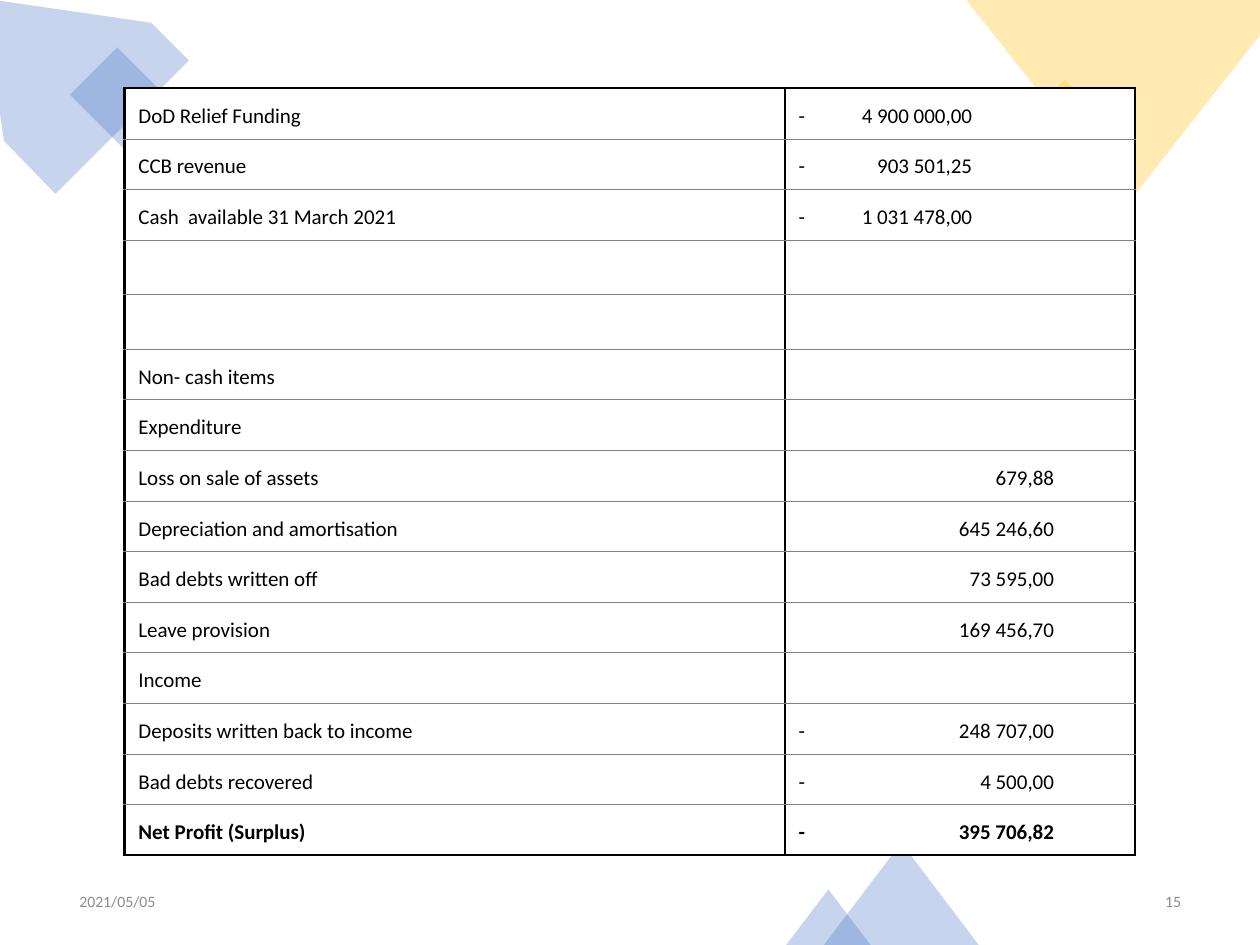
from lxml.etree import SubElement
from pptx import Presentation
from pptx.dml.color import RGBColor
from pptx.enum.shapes import MSO_SHAPE as SHAPE
from pptx.enum.text import MSO_ANCHOR as ANCHOR, PP_ALIGN as ALIGN
from pptx.oxml.ns import qn
from pptx.util import Cm, Pt

BLUE, YELLOW, BLACK, GREY, WHITE = "4472C4", "FFC000", "000000", "808080", "FFFFFF"
FONT = "Calibri"

ROWS = [
    ("DoD Relief Funding", "-", "4 900 000,00"),
    ("CCB revenue", "-", "903 501,25"),
    ("Cash  available 31 March 2021", "-", "1 031 478,00"),
    ("", "", ""),
    ("", "", ""),
    ("Non- cash items", "", ""),
    ("Expenditure", "", ""),
    ("Loss on sale of assets", "", "679,88"),
    ("Depreciation and amortisation", "", "645 246,60"),
    ("Bad debts written off", "", "73 595,00"),
    ("Leave provision", "", "169 456,70"),
    ("Income", "", ""),
    ("Deposits written back to income", "-", "248 707,00"),
    ("Bad debts recovered", "-", "4 500,00"),
    ("Net Profit (Surplus)", "-", "395 706,82"),
]
CASH_ROWS = 3
CASH_TAB, ITEM_TAB = 3.5, 5.15
COLUMNS = (13.31, 7.06)
ROW_HEIGHT, GAP_HEIGHT = 1.02, 1.1
TABLE_LEFT, TABLE_TOP = 2.51, 1.78

POLYGONS = [
    (BLUE, [(3.05, 0.46), (-0.33, -0.03), (0.08, 2.84), (1.12, 3.91), (3.81, 1.22)]),
    (YELLOW, [(25.4, 0), (19.48, 0), (22.73, 4.11), (25.4, 0.71)]),
]
DIAMONDS = [(BLUE, (1.85, 1.17, 1.35, 1.8)), (YELLOW, (20.93, 1.83, 1.42, 1.9))]
TRIANGLES = [(BLUE, (16.61, 16.99, 3.12, 2.06)), (BLUE, (15.85, 17.93, 1.7, 1.12))]
FOOTERS = [("2021/05/05", 1.35, ALIGN.LEFT), ("15", 18.34, ALIGN.RIGHT)]


def rgb(code):
    return RGBColor.from_string(code)


def tint(sp, color):
    sp.shadow.inherit = False
    sp.fill.solid()
    sp.fill.fore_color.rgb = rgb(color)
    sp.line.fill.background()
    clr = sp._element.spPr.find(qn("a:solidFill")).find(qn("a:srgbClr"))
    SubElement(clr, qn("a:alpha"), val="30000")


def add_polygon(s, color, points):
    pts = [(Cm(x), Cm(y)) for x, y in points]
    builder = s.shapes.build_freeform(*pts[0])
    builder.add_line_segments(pts[1:], close=True)
    tint(builder.convert_to_shape(), color)


def add_preset(s, kind, color, box, rotation=0):
    sp = s.shapes.add_shape(kind, *map(Cm, box))
    sp.rotation = rotation
    tint(sp, color)


def style(p, size, color, bold=False):
    f = p.font
    f.name, f.size, f.bold = FONT, Pt(size), bold
    f.color.rgb = rgb(color)


def add_footer(s, text, left, align):
    tf = s.shapes.add_textbox(Cm(left), Cm(17.65), Cm(5.72), Cm(1.02)).text_frame
    tf.word_wrap = True
    tf.vertical_anchor = ANCHOR.MIDDLE
    p = tf.paragraphs[0]
    p.text, p.alignment, p.space_after = text, align, Pt(6)
    style(p, 9, "8C8C8C")


def set_border(cell, side, color, width):
    ln = SubElement(cell._tc.get_or_add_tcPr(), qn(f"a:ln{side}"), w=str(Pt(width)))
    SubElement(SubElement(ln, qn("a:solidFill")), qn("a:srgbClr"), val=color)


def add_right_tab(p, position):
    tabs = SubElement(p._p.get_or_add_pPr(), qn("a:tabLst"))
    SubElement(tabs, qn("a:tab"), pos=str(Cm(position)), algn="r")


def fill_cell(cell, text, row, tab=None):
    last = len(ROWS) - 1
    outer, inner = (BLACK, 1.5), (GREY, 0.5)
    borders = {"L": outer, "R": outer,
               "T": outer if row == 0 else inner, "B": outer if row == last else inner}
    for side, line in borders.items():
        set_border(cell, side, *line)
    cell.fill.solid()
    cell.fill.fore_color.rgb = rgb(WHITE)
    cell.vertical_anchor = ANCHOR.BOTTOM
    cell.margin_left, cell.margin_right = Cm(0.28), Cm(0.03)
    cell.margin_top = cell.margin_bottom = Cm(0.2)
    p = cell.text_frame.paragraphs[0]
    p.text = text
    if tab:
        add_right_tab(p, tab)
    style(p, 12, BLACK, row == last)


def add_statement(s):
    heights = [ROW_HEIGHT if row[0] else GAP_HEIGHT for row in ROWS]
    table = s.shapes.add_table(len(ROWS), len(COLUMNS), Cm(TABLE_LEFT), Cm(TABLE_TOP),
                               Cm(sum(COLUMNS)), Cm(sum(heights))).table
    table.first_row = table.horz_banding = False
    for col, width in zip(table.columns, COLUMNS):
        col.width = Cm(width)
    for i, (label, sign, amount) in enumerate(ROWS):
        table.rows[i].height = Cm(heights[i])
        fill_cell(table.cell(i, 0), label, i)
        tab = CASH_TAB if i < CASH_ROWS else ITEM_TAB
        fill_cell(table.cell(i, 1), f"{sign}\t{amount}" if amount else "", i, amount and tab)


def main():
    """Build the cash and non-cash items statement slide."""
    prs = Presentation()
    prs.slide_width, prs.slide_height = Cm(25.4), Cm(19.05)
    s = prs.slides.add_slide(prs.slide_layouts[6])
    for color, points in POLYGONS:
        add_polygon(s, color, points)
    for color, box in DIAMONDS:
        add_preset(s, SHAPE.RECTANGLE, color, box, 315)
    for color, box in TRIANGLES:
        add_preset(s, SHAPE.ISOSCELES_TRIANGLE, color, box)
    for footer in FOOTERS:
        add_footer(s, *footer)
    add_statement(s)
    prs.save("out.pptx")


if __name__ == "__main__":
    main()
